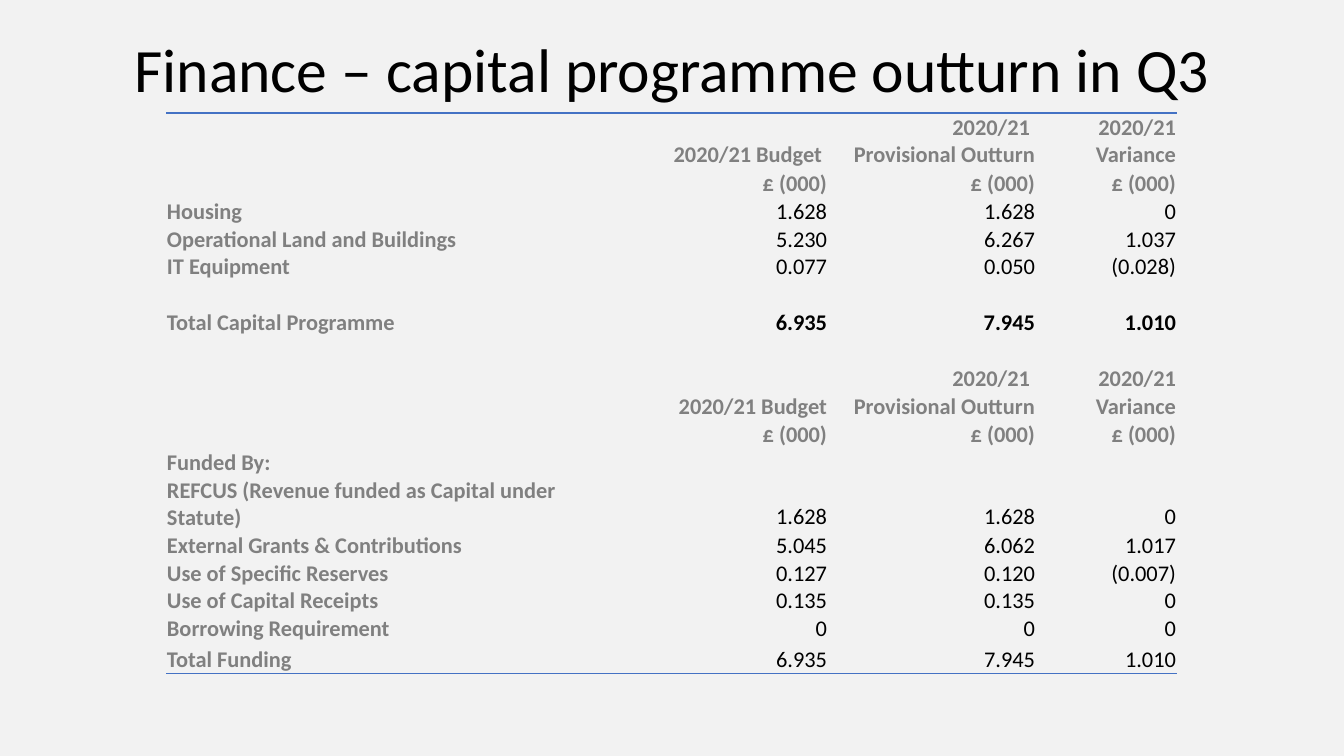
from lxml.etree import SubElement
from pptx import Presentation
from pptx.dml.color import RGBColor
from pptx.enum.text import MSO_ANCHOR, PP_ALIGN
from pptx.oxml import parse_xml
from pptx.oxml.ns import nsdecls, qn
from pptx.util import Pt

SCALE = 914400 / 100.8
PLAIN = "{2D5ABB26-0587-4C30-8999-92F81FD0307C}"  # no style, no grid


def px(n):
    return round(n * SCALE)


def color(code):
    return RGBColor.from_string(code)


class Deck:
    font = "Calibri"
    black, grey, blue, back = "000000", "808080", "4472C4", "F2F2F2"

    def __init__(self, width, height):
        self.prs = Presentation()
        self.prs.slide_width, self.prs.slide_height = px(width), px(height)
        self.slide = self.prs.slides.add_slide(self.prs.slide_layouts[6])
        fill = self.slide.background.fill
        fill.solid()
        fill.fore_color.rgb = color(self.back)

    def style(self, para, size, tint, bold=False, align=PP_ALIGN.LEFT):
        para.alignment = align
        for run in para.runs:
            run.font.name, run.font.size = self.font, Pt(size)
            run.font.bold = bold
            run.font.color.rgb = color(tint)
        if not para.runs:  # keeps empty rows at the text height
            SubElement(para._p, qn("a:endParaRPr"), sz=str(size * 100))

    def title(self, text, x, y, w, h, size):
        frame = self.slide.shapes.add_textbox(px(x), px(y), px(w), px(h)).text_frame
        frame.word_wrap = True
        frame.vertical_anchor = MSO_ANCHOR.MIDDLE
        frame.text = text
        para = frame.paragraphs[0]
        para.line_spacing = 0.9
        self.style(para, size, self.black, align=PP_ALIGN.CENTER)

    def border(self, cell, side):
        cell._tc.get_or_add_tcPr().insert(0, parse_xml(
            f'<a:{side} {nsdecls("a")} w="12700"><a:solidFill>'
            f'<a:srgbClr val="{self.blue}"/></a:solidFill></a:{side}>'))

    def cell(self, cell, text, size, tint, bold, align):
        cell.margin_left = cell.margin_right = cell.margin_top = px(1)
        cell.margin_bottom = 0
        cell.vertical_anchor = MSO_ANCHOR.BOTTOM
        cell.fill.background()
        cell.text_frame.text = text
        self.style(cell.text_frame.paragraphs[0], size, tint, bold, align)

    def table(self, rows, heads, strong, x, y, cols, highs, size):
        grid = self.slide.shapes.add_table(
            len(rows), len(cols), px(x), px(y), px(sum(cols)), px(sum(highs))).table
        grid.first_row = grid.horz_banding = False
        grid._tbl.tblPr.find(qn("a:tableStyleId")).text = PLAIN
        for col, width in zip(grid.columns, cols):
            col.width = px(width)
        for row, high in zip(grid.rows, highs):
            row.height = px(high)
        for r, row in enumerate(rows):
            for c, text in enumerate(row):
                label = c == 0 or r in heads
                self.cell(grid.cell(r, c), text, size,
                          self.grey if label else self.black,
                          label or r in strong,
                          PP_ALIGN.RIGHT if c else PP_ALIGN.LEFT)
        for c in range(len(cols)):
            self.border(grid.cell(0, c), "lnT")
            self.border(grid.cell(len(rows) - 1, c), "lnB")


def main():
    deck = Deck(1344, 756)

    # Title
    deck.title("Finance – capital programme outturn in Q3", 93, 0, 1159, 146, 44)

    # Capital programme and its funding
    names = ("2020/21 \vProvisional Outturn", "2020/21 Variance")
    units = ("",) + ("£ (000)",) * 3
    blank = ("",) * 4
    rows = [
        ("", "2020/21 Budget ", *names),
        units,
        ("Housing", "1.628", "1.628", "0"),
        ("Operational Land and Buildings", "5.230", "6.267", "1.037"),
        ("IT Equipment", "0.077", "0.050", "(0.028)"),
        blank,
        ("Total Capital Programme", "6.935", "7.945", "1.010"),
        blank,
        ("", "2020/21 Budget", *names),
        units,
        ("Funded By:", "", "", ""),
        ("REFCUS (Revenue funded as Capital under Statute)", "1.628", "1.628", "0"),
        ("External Grants & Contributions", "5.045", "6.062", "1.017"),
        ("Use of Specific Reserves", "0.127", "0.120", "(0.007)"),
        ("Use of Capital Receipts", "0.135", "0.135", "0"),
        ("Borrowing Requirement", "0", "0", "0"),
        ("Total Funding", "6.935", "7.945", "1.010"),
    ]
    tall = {0: 56, 8: 56, 11: 49, 16: 31}
    highs = [tall.get(r, 25) for r in range(len(rows))]
    deck.table(rows, {0, 1, 8, 9}, {6}, 166, 113, (469, 193, 208, 141), highs, 16)

    deck.prs.save("out.pptx")


if __name__ == "__main__":
    main()
